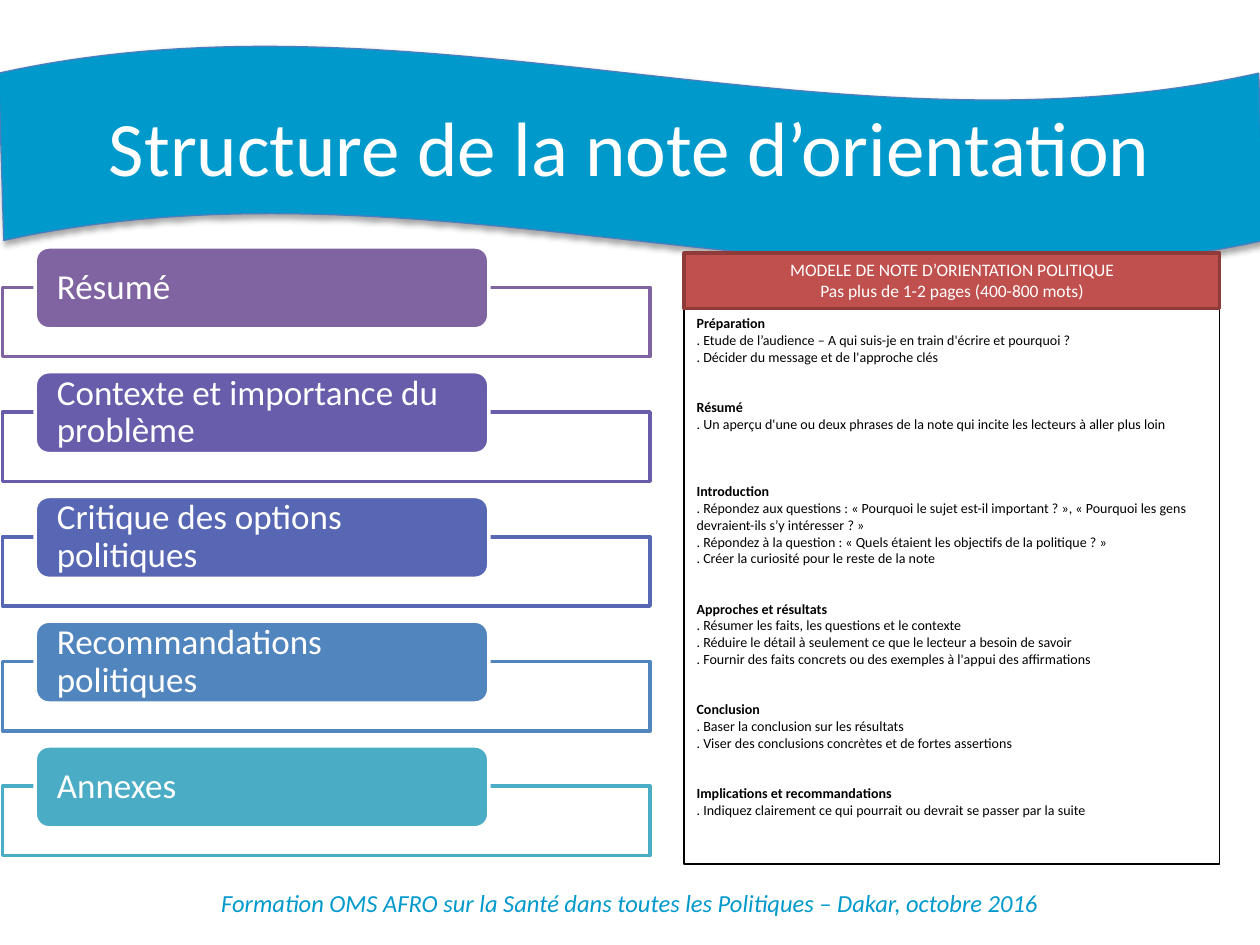
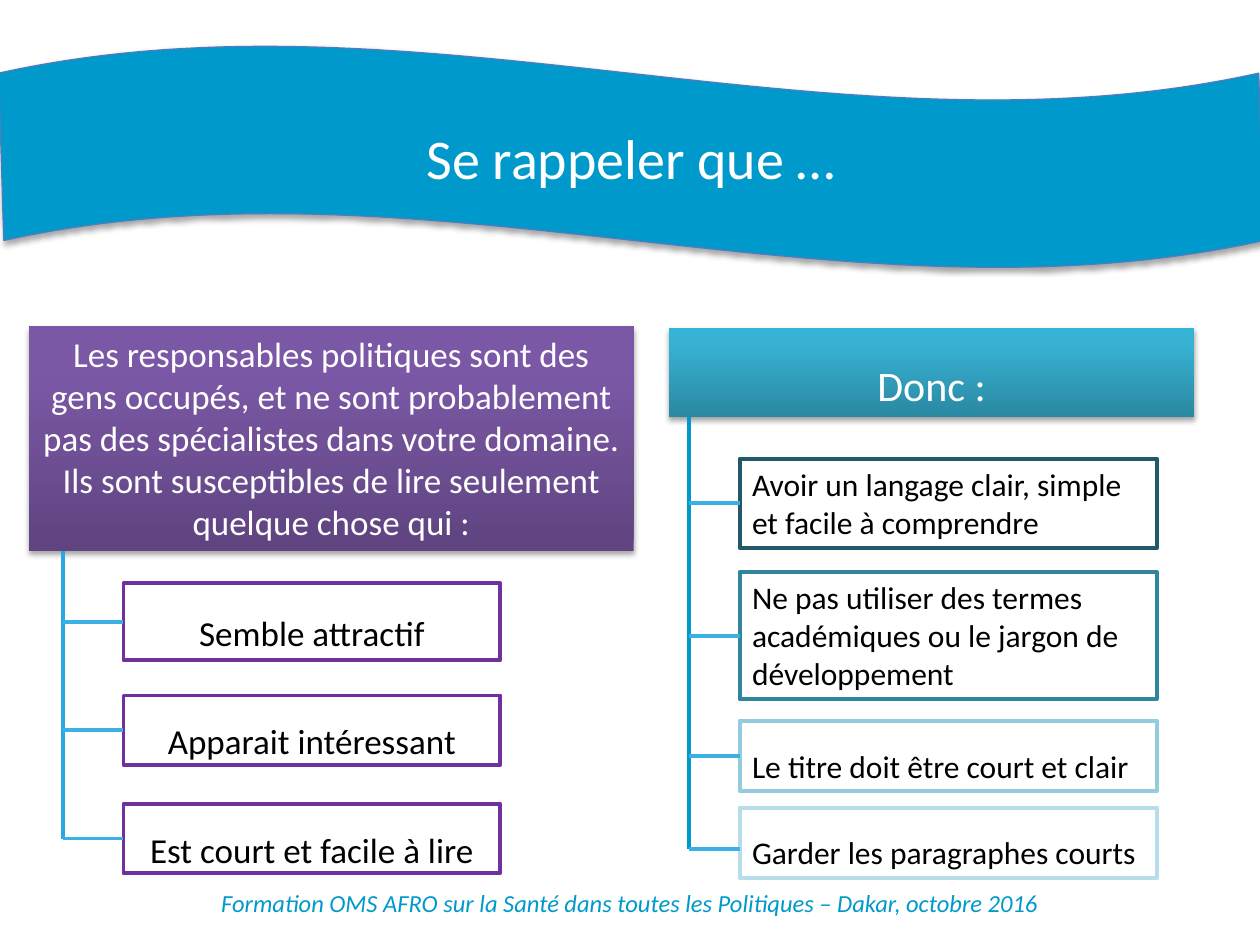
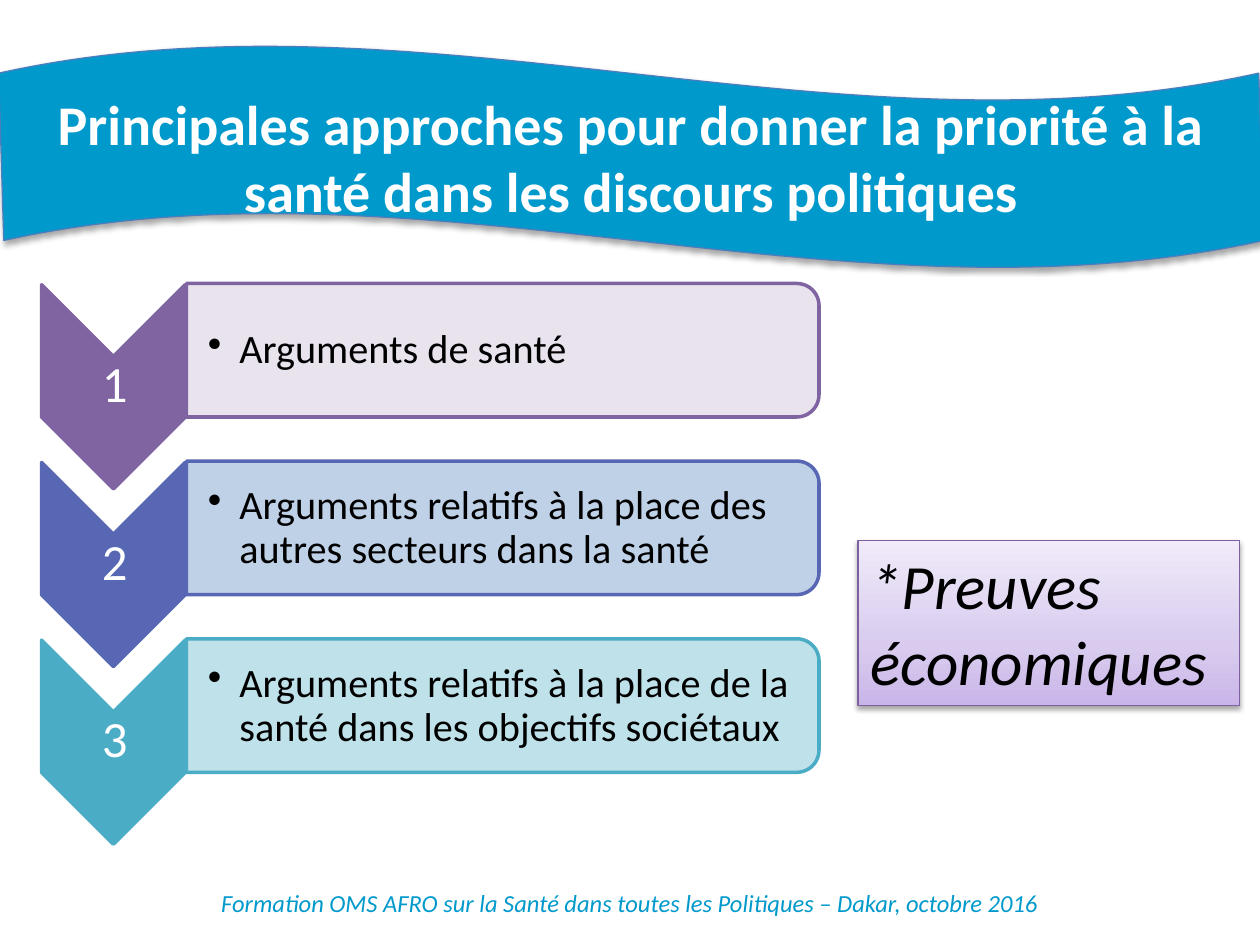
from dataclasses import dataclass

from lxml import etree
from pptx import Presentation
from pptx import util as u
from pptx.dml.color import RGBColor
from pptx.enum import shapes, text
from pptx.oxml.ns import qn


@dataclass(frozen=True)
class Theme:
    font: str = "Calibri"
    white: str = "FFFFFF"
    black: str = "000000"
    blue: str = "0099CC"
    band_line: str = "4B7EBC"
    purple: str = "8064A2"
    violet: str = "685DAB"
    indigo: str = "5767B4"
    steel: str = "5185BD"
    teal: str = "4BACC6"
    red: str = "C0504D"
    dark_red: str = "8E3B39"
    box_purple: str = "7030A0"
    branch: str = "3BB0E5"
    left_spine: str = "29A9E3"
    note_line: str = "7D60A0"
    purple_gradient: tuple = ((0, "5F4480"), (80, "7B58A6"), (100, "7C57A8"))
    teal_gradient: tuple = ((0, "2A88A2"), (80, "37B1D2"), (100, "34B4D6"))
    lilac_gradient: tuple = ((0, "C9B5E8"), (35, "D8CBEE"), (100, "F0EAF9"))
    big_title: int = 44
    title: int = 32
    footer: int = 14
    step: int = 20
    model_head: int = 10
    model_body: int = 8
    conclusion: int = 24
    advice: int = 18
    number: int = 29
    argument: int = 23
    note: int = 36


theme = Theme()
kinds = shapes.MSO_SHAPE
align = text.PP_ALIGN
anchors = text.MSO_ANCHOR


def add_box(slide, kind, at, fill=None, line=None, width=2, shadow=False, opacity=100):
    """Add a preset shape; fill is a colour, a tuple of gradient stops, or None."""
    shape = slide.shapes.add_shape(kind, *map(u.Inches, at))
    shape.shadow.inherit = False
    properties = shape._element.spPr
    if fill is None:
        shape.fill.background()
    elif isinstance(fill, str):
        shape.fill.solid()
        shape.fill.fore_color.rgb = RGBColor.from_string(fill)
        if opacity < 100:
            color = properties.find(qn("a:solidFill"))[0]
            etree.SubElement(color, qn("a:alpha"), val=str(opacity * 1000))
    else:
        shape.fill.gradient()
        gradient = properties.find(qn("a:gradFill"))
        stops = gradient.find(qn("a:gsLst"))
        stops[:] = []
        for position, color in fill:
            stop = etree.SubElement(stops, qn("a:gs"), pos=str(position * 1000))
            etree.SubElement(stop, qn("a:srgbClr"), val=color)
        gradient.find(qn("a:lin")).set("ang", "16200000")
    if line:
        shape.line.color.rgb = RGBColor.from_string(line)
        shape.line.width = u.Pt(width)
    else:
        shape.line.fill.background()
    if shadow:
        effect = etree.SubElement(
            properties.find(qn("a:effectLst")), qn("a:outerShdw"),
            blurRad=str(u.Pt(3.1)), dist=str(u.Pt(1.8)), dir="5400000", rotWithShape="0")
        color = etree.SubElement(effect, qn("a:srgbClr"), val=theme.black)
        etree.SubElement(color, qn("a:alpha"), val="35000")
    return shape


def write(shape, paragraphs, size, color, alignment=align.LEFT, anchor=anchors.TOP,
          bold=False, italic=False, spacing=None, margins=(0.1, 0.05, 0.1, 0.05)):
    """Fill a shape with paragraphs of one style; a newline is a line break."""
    frame = shape.text_frame
    frame.word_wrap = True
    frame.vertical_anchor = anchor
    (frame.margin_left, frame.margin_top,
     frame.margin_right, frame.margin_bottom) = map(u.Inches, margins)
    for index, content in enumerate(paragraphs):
        paragraph = frame.add_paragraph() if index else frame.paragraphs[0]
        paragraph.text = content
        paragraph.alignment = alignment
        if spacing:
            paragraph.line_spacing = spacing
        for run in paragraph.runs:
            run.font.name = theme.font
            run.font.size = u.Pt(size)
            run.font.bold = bold
            run.font.italic = italic
            run.font.color.rgb = RGBColor.from_string(color)
        for line_break in paragraph._p.findall(qn("a:br")):
            etree.SubElement(line_break, qn("a:rPr"), sz=str(size * 100))
    return frame.paragraphs


presentation = Presentation()
presentation.slide_width = u.Inches(10)
presentation.slide_height = u.Inches(7.5)

# Shared parts: wave band, title and footer
titles = [
    ("Structure de la note d’orientation", theme.big_title, False),
    ("Se rappeler que …", theme.title, False),
    ("Principales approches pour donner la priorité à la santé dans les discours politiques",
     theme.title, True),
]
for title, size, bold in titles:
    slide = presentation.slides.add_slide(presentation.slide_layouts[6])
    title_holder = add_box(slide, kinds.WAVE, (-0.01, 0.36, 10.04, 1.77),
                           theme.blue, theme.band_line, 0.75, shadow=True)
    title_holder.adjustments[0] = 0.125
    title_holder.adjustments[1] = 0.002
    if size == theme.big_title:
        title_holder = slide.shapes.add_textbox(*map(u.Inches, (0.5, 0.53, 9, 1.25)))
    write(title_holder, [title], size, theme.white, align.CENTER, anchors.MIDDLE, bold)
    footer = slide.shapes.add_textbox(*map(u.Inches, (0, 7, 10, 0.34)))
    write(footer,
          ["Formation OMS AFRO sur la Santé dans toutes les Politiques – Dakar, octobre 2016"],
          theme.footer, theme.blue, align.CENTER, italic=True)
structure_slide, reminder_slide, approach_slide = presentation.slides

# Slide 1: the five sections of the note
sections = [
    ("Résumé", theme.purple),
    ("Contexte et importance du problème", theme.violet),
    ("Critique des options politiques", theme.indigo),
    ("Recommandations politiques", theme.steel),
    ("Annexes", theme.teal),
]
for index, (section, color) in enumerate(sections):
    top = 1.96 + 0.99 * index
    add_box(structure_slide, kinds.RECTANGLE, (0.02, top + 0.32, 5.14, 0.55),
            theme.white, color, opacity=90)
    label = add_box(structure_slide, kinds.ROUNDED_RECTANGLE, (0.28, top, 3.6, 0.65),
                    color, theme.white)
    write(label, [section], theme.step, theme.white, anchor=anchors.MIDDLE,
          spacing=0.9, margins=(0.14, 0, 0.14, 0))

# Slide 1: model of the note, each part followed by a gap counted in lines
model_parts = [
    ("Préparation\n. Etude de l’audience – A qui suis-je en train d'écrire et pourquoi ?\n"
     ". Décider du message et de l'approche clés", 2),
    ("Résumé\n. Un aperçu d'une ou deux phrases de la note qui incite les lecteurs à aller "
     "plus loin", 3),
    ("Introduction\n. Répondez aux questions : « Pourquoi le sujet est-il important ? », "
     "« Pourquoi les gens devraient-ils s’y intéresser ? »\n"
     ". Répondez à la question : « Quels étaient les objectifs de la politique ? »\n"
     ". Créer la curiosité pour le reste de la note", 2),
    ("Approches et résultats\n. Résumer les faits, les questions et le contexte\n"
     ". Réduire le détail à seulement ce que le lecteur a besoin de savoir\n"
     ". Fournir des faits concrets ou des exemples à l'appui des affirmations", 2),
    ("Conclusion\n. Baser la conclusion sur les résultats\n"
     ". Viser des conclusions concrètes et de fortes assertions", 2),
    ("Implications et recommandations\n"
     ". Indiquez clairement ce qui pourrait ou devrait se passer par la suite", 0),
]
model = add_box(structure_slide, kinds.RECTANGLE, (5.43, 2.45, 4.25, 4.41),
                line=theme.black, width=1)
paragraphs = write(model, [part for part, gap in model_parts], theme.model_body, theme.black)
for paragraph, (part, gap) in zip(paragraphs, model_parts):
    paragraph.runs[0].font.bold = True
    paragraph.space_after = u.Pt(1.2 * theme.model_body * gap)
model_head = add_box(structure_slide, kinds.RECTANGLE, (5.43, 2.01, 4.25, 0.44),
                     theme.red, theme.dark_red)
write(model_head,
      ["MODELE DE NOTE D’ORIENTATION POLITIQUE\nPas plus de 1-2 pages (400-800 mots)"],
      theme.model_head, theme.white, align.CENTER)

# Slide 2: the two headings
readers = add_box(reminder_slide, kinds.RECTANGLE, (0.23, 2.59, 4.8, 1.78),
                  theme.purple_gradient, shadow=True)
write(readers,
      ["Les responsables politiques sont des gens occupés, et ne sont probablement pas des "
       "spécialistes dans votre domaine. Ils sont susceptibles de lire seulement quelque "
       "chose qui :"],
      theme.step, theme.white, align.CENTER)
therefore = add_box(reminder_slide, kinds.RECTANGLE, (5.31, 2.6, 4.17, 0.71),
                    theme.teal_gradient, shadow=True)
paragraphs = write(therefore, ["Donc :"], theme.conclusion, theme.white, align.CENTER,
                   anchors.MIDDLE, spacing=1.5)
paragraphs[0].space_after = u.Pt(6)

# Slide 2: trees; items are top, height, line colour, line spacing, branch shift, text
trees = [
    (0.5, 4.37, 6.66, theme.left_spine, 0.98, 2.99, theme.step, align.CENTER, [
        (4.63, 0.61, theme.box_purple, 1.5, 0, "Semble attractif"),
        (5.52, 0.55, theme.box_purple, 1.5, 0, "Apparait intéressant"),
        (6.38, 0.55, theme.box_purple, 1.5, 0, "Est court et facile à lire"),
    ]),
    (5.47, 3.31, 6.74, theme.blue, 5.87, 3.31, theme.advice, align.LEFT, [
        (3.64, 0.71, "215968", None, 0, "Avoir un langage clair, simple et facile à comprendre"),
        (4.54, 1.01, "31859C", None, 0,
         "Ne pas utiliser des termes académiques ou le jargon de développement"),
        (5.72, 0.56, "93CDDD", 1.5, 0, "Le titre doit être court et clair"),
        (6.41, 0.56, "B7DEE8", 1.5, 0.05, "Garder les paragraphes courts"),
    ]),
]
for spine_x, spine_top, spine_bottom, spine_color, left, width, size, alignment, items in trees:
    lines = [(spine_x, spine_top, spine_x, spine_bottom, spine_color, None)]
    for top, height, color, spacing, shift, content in items:
        item = add_box(reminder_slide, kinds.RECTANGLE, (left, top, width, height),
                       line=color, width=2.25)
        write(item, [content], size, theme.black, alignment,
              anchors.MIDDLE if spacing else anchors.TOP, spacing=spacing)
        middle = top + height / 2 + shift
        lines.append((spine_x, middle, left, middle, theme.branch, None if shift else item))
    for *ends, color, target in lines:
        connector = reminder_slide.shapes.add_connector(
            shapes.MSO_CONNECTOR.STRAIGHT, *map(u.Inches, ends))
        connector.line.color.rgb = RGBColor.from_string(color)
        connector.line.width = u.Pt(2.25)
        etree.SubElement(connector._element.spPr, qn("a:effectLst"))
        if target:
            connector.end_connect(target, 1)

# Slide 3: numbered arguments
arguments = [
    ("Arguments de santé", theme.purple, "E6E0EC"),
    ("Arguments relatifs à la place des autres secteurs dans la santé", theme.indigo, "B9CDE5"),
    ("Arguments relatifs à la place de la santé dans les objectifs sociétaux",
     theme.teal, "B7DEE8"),
]
for index, (argument, color, tint) in enumerate(arguments):
    offset = 1.41 * index
    chevron = add_box(approach_slide, kinds.CHEVRON, (0.09, 2.5 + offset, 1.62, 1.14),
                      color, color)
    number = approach_slide.shapes.add_textbox(
        *map(u.Inches, (0.34, 2.82 + offset, 1.14, 0.49)))
    write(number, [str(index + 1)], theme.number, theme.white, align.CENTER, anchors.MIDDLE,
          spacing=0.9, margins=(0.02, 0.02, 0.02, 0.02))
    panel = add_box(approach_slide, kinds.ROUND_2_SAME_RECTANGLE,
                    (3.46, 0.27 + offset, 1.06, 5.02), tint, color, opacity=90)
    chevron.rotation = panel.rotation = 90
    label = approach_slide.shapes.add_textbox(
        *map(u.Inches, (1.47, 2.31 + offset, 4.97, 0.95)))
    paragraphs = write(label, [argument], theme.argument, theme.black, anchor=anchors.MIDDLE,
                       spacing=0.9, margins=(0.18, 0.02, 0.02, 0.02))
    bullet = paragraphs[0]._p.get_or_add_pPr()
    bullet.set("marL", str(u.Inches(0.25)))
    bullet.set("indent", str(u.Inches(-0.25)))
    etree.SubElement(bullet, qn("a:buChar"), char="•")

# Slide 3: note on evidence
evidence = add_box(approach_slide, kinds.RECTANGLE, (6.81, 4.29, 3.03, 1.31),
                   theme.lilac_gradient, theme.note_line, 0.75, shadow=True)
write(evidence, ["*Preuves économiques"], theme.note, theme.black, italic=True)

presentation.save("out.pptx")
